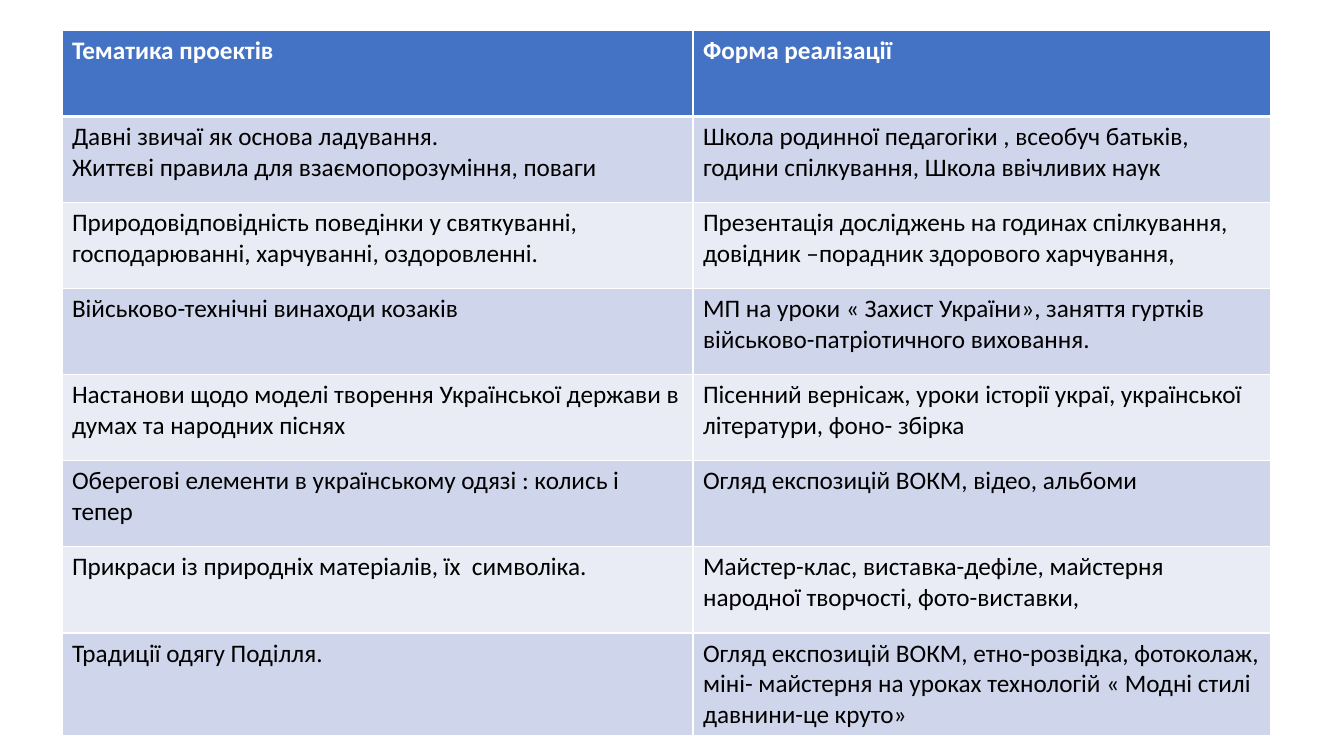
from lxml import etree
from pptx import Presentation
from pptx.dml.color import RGBColor
from pptx.oxml.ns import qn
from pptx.util import Pt

PX = 9525  # EMU in one px, 96 px to the inch
BLANK = 6

WHITE = RGBColor(0xFF, 0xFF, 0xFF)
BLACK = RGBColor(0x00, 0x00, 0x00)
BLUE = RGBColor(0x44, 0x72, 0xC4)
BANDS = [RGBColor(0xE9, 0xEB, 0xF5), RGBColor(0xCF, 0xD5, 0xEA)]

HEAD = {"name": "Calibri", "size": Pt(18), "bold": True}
BODY = {**HEAD, "bold": False}

ROWS = [
    ("Тематика проектів", "Форма реалізації"),
    ("Давні звичаї як основа ладування.\n"
     "Життєві правила для взаємопорозуміння, поваги",
     "Школа родинної педагогіки , всеобуч батьків, години спілкування, "
     "Школа ввічливих наук"),
    ("Природовідповідність поведінки у святкуванні, господарюванні, "
     "харчуванні, оздоровленні.",
     "Презентація досліджень на годинах спілкування, "
     "довідник –порадник здорового харчування,"),
    ("Військово-технічні винаходи козаків",
     "МП на уроки « Захист України», заняття гуртків "
     "військово-патріотичного виховання."),
    ("Настанови щодо моделі творення Української держави в думах "
     "та народних піснях",
     "Пісенний вернісаж, уроки історії украї, української літератури, "
     "фоно- збірка"),
    ("Оберегові елементи в українському одязі : колись і тепер",
     "Огляд експозицій ВОКМ, відео, альбоми"),
    ("Прикраси із природніх матеріалів, їх  символіка.",
     "Майстер-клас, виставка-дефіле, майстерня народної творчості, "
     "фото-виставки,"),
    ("Традиції одягу Поділля.",
     "Огляд експозицій ВОКМ, етно-розвідка, фотоколаж, міні- майстерня "
     "на уроках технологій « Модні стилі давнини-це круто»"),
]


class Deck:
    def __init__(self, wide, high):
        self.prs = Presentation()
        self.prs.slide_width = wide * PX
        self.prs.slide_height = high * PX
        self.slide = self.prs.slides.add_slide(self.prs.slide_layouts[BLANK])

    def table(self, left, top, widths, high, rows):
        grid = self.slide.shapes.add_table(
            len(rows), len(widths), left * PX, top * PX,
            sum(widths) * PX, high * len(rows) * PX).table
        for col, width in zip(grid.columns, widths):
            col.width = width * PX
        for i, texts in enumerate(rows):
            for j, text in enumerate(texts):
                self.cell(grid.cell(i, j), text, i)

    def cell(self, cell, text, row):
        head = row == 0
        # The rule under the header is thicker than the others
        self.edges(cell, {"L": 1, "R": 1, "T": 3 if row == 1 else 1,
                          "B": 3 if head else 1})
        cell.fill.solid()
        cell.fill.fore_color.rgb = BLUE if head else BANDS[row % 2]
        cell.text = text
        for para in cell.text_frame.paragraphs:
            for run in para.runs:
                for key, value in (HEAD if head else BODY).items():
                    setattr(run.font, key, value)
                run.font.color.rgb = WHITE if head else BLACK

    def edges(self, cell, sides):
        props = cell._tc.get_or_add_tcPr()
        for side, width in sides.items():
            line = etree.SubElement(props, qn("a:ln" + side), w=str(Pt(width)))
            fill = etree.SubElement(line, qn("a:solidFill"))
            etree.SubElement(fill, qn("a:srgbClr"), val=str(WHITE))


def main():
    deck = Deck(1280, 720)
    # Project topics and the ways they are carried out
    deck.table(59, 29, [601, 550], 82, ROWS)
    deck.prs.save("out.pptx")


if __name__ == "__main__":
    main()
